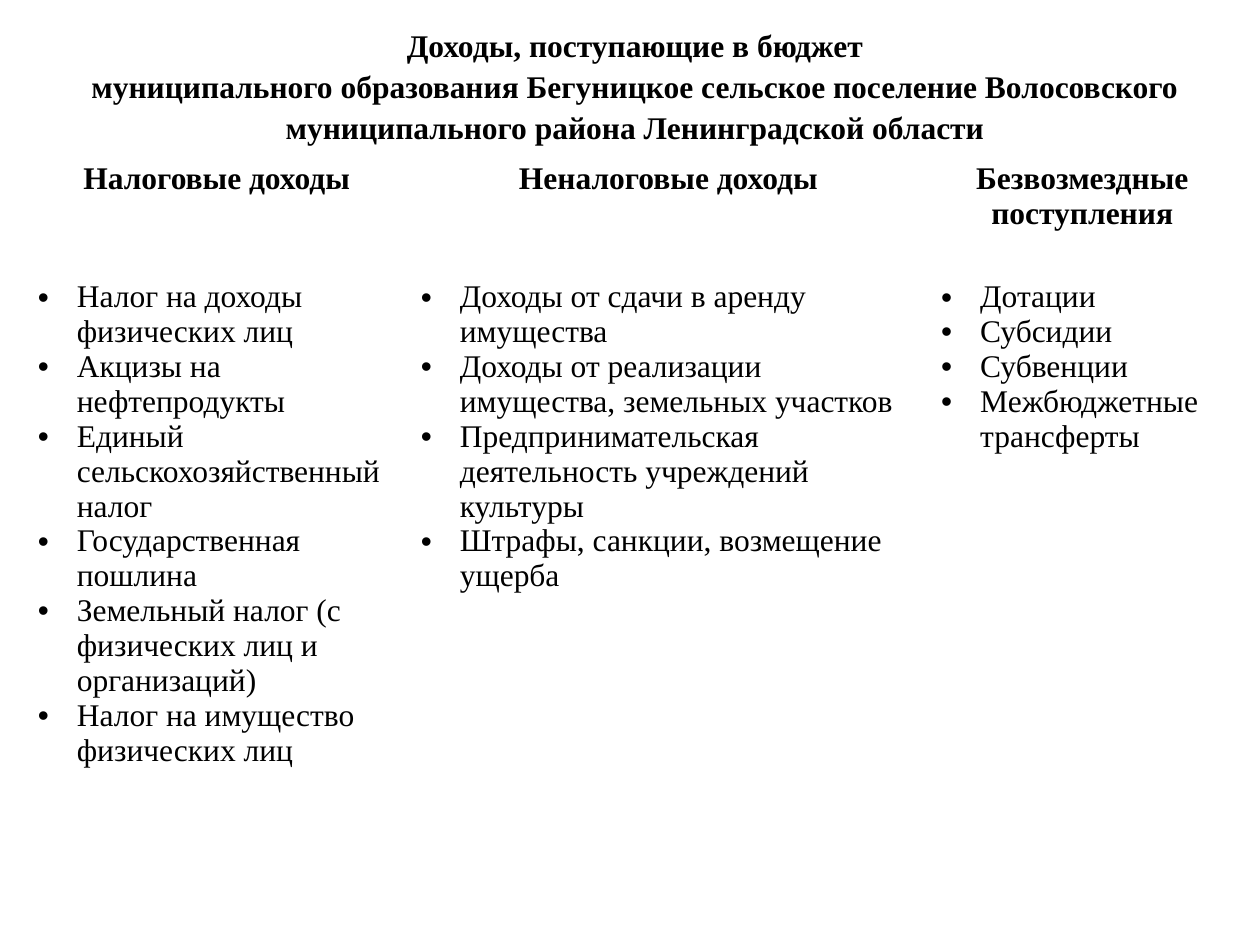
from lxml.etree import SubElement
from pptx import Presentation
from pptx.dml.color import RGBColor
from pptx.enum.text import MSO_AUTO_SIZE, PP_ALIGN
from pptx.oxml.ns import qn
from pptx.util import Inches, Pt

TITLE = (
    "Доходы, поступающие в бюджет\v"
    "муниципального образования Бегуницкое сельское поселение Волосовского "
    "муниципального района Ленинградской области"
)
COLUMNS = [
    ("Налоговые доходы", 3.04, [
        "Налог на доходы физических лиц",
        "Акцизы на нефтепродукты",
        "Единый сельскохозяйственный налог",
        "Государственная пошлина",
        "Земельный налог (с физических лиц и организаций)",
        "Налог на имущество физических лиц",
    ]),
    ("Неналоговые доходы", 4.13, [
        "Доходы от сдачи в аренду имущества",
        "Доходы от реализации имущества, земельных участков",
        "Предпринимательская деятельность учреждений культуры",
        "Штрафы, санкции, возмещение ущерба",
    ]),
    ("Безвозмездные поступления", 2.44, [
        "Дотации",
        "Субсидии",
        "Субвенции",
        "Межбюджетные трансферты",
    ]),
]
ROWS = [0.94, 4.49]
INDENT = 0.31
FONT, SIZE = "Times New Roman", 18
BLACK, WHITE = "000000", "FFFFFF"


def color(value):
    return RGBColor.from_string(value)


def style(p, bold):
    for r in p.runs:
        r.font.name, r.font.size, r.font.bold = FONT, Pt(SIZE), bold
        r.font.color.rgb = color(BLACK)


def bullet(p):
    pPr = p._p.get_or_add_pPr()
    pPr.set("marL", str(Inches(INDENT)))
    pPr.set("indent", str(-Inches(INDENT)))
    SubElement(pPr, qn("a:buFont"), typeface="Arial")
    SubElement(pPr, qn("a:buChar"), char="•")


def paint(cell, bottom):
    tcPr = cell._tc.get_or_add_tcPr()
    for side, width in (("L", 1), ("R", 1), ("T", 1), ("B", bottom)):
        ln = SubElement(tcPr, qn(f"a:ln{side}"), w=str(Pt(width)))
        SubElement(SubElement(ln, qn("a:solidFill")), qn("a:srgbClr"), val=WHITE)
    cell.fill.solid()
    cell.fill.fore_color.rgb = color(WHITE)


def add_income_table(s):
    widths = [width for _, width, _ in COLUMNS]
    table = s.shapes.add_table(
        len(ROWS), len(COLUMNS), Inches(0.2), Inches(1.23),
        Inches(sum(widths)), Inches(sum(ROWS))).table
    for row, height in zip(table.rows, ROWS):
        row.height = Inches(height)
    for i, (heading, width, items) in enumerate(COLUMNS):
        table.columns[i].width = Inches(width)
        head, body = table.cell(0, i), table.cell(1, i)
        paint(head, 3)
        paint(body, 1)
        head.text_frame.text = heading
        p = head.text_frame.paragraphs[0]
        p.alignment = PP_ALIGN.CENTER
        style(p, True)
        body.text_frame.text = "\n".join(items)
        for p in body.text_frame.paragraphs:
            bullet(p)
            style(p, False)


def add_title(s):
    tf = s.shapes.add_textbox(
        Inches(0.51), Inches(0.13), Inches(9.06), Inches(1.01)).text_frame
    tf.word_wrap = True
    tf.auto_size = MSO_AUTO_SIZE.SHAPE_TO_FIT_TEXT
    p = tf.paragraphs[0]
    p.text = TITLE
    p.alignment = PP_ALIGN.CENTER
    p.line_spacing = 1.09
    style(p, True)


def main():
    prs = Presentation()
    prs.slide_width, prs.slide_height = Inches(10), Inches(7.5)
    s = prs.slides.add_slide(prs.slide_layouts[6])
    add_income_table(s)
    add_title(s)
    prs.save("out.pptx")


if __name__ == "__main__":
    main()
